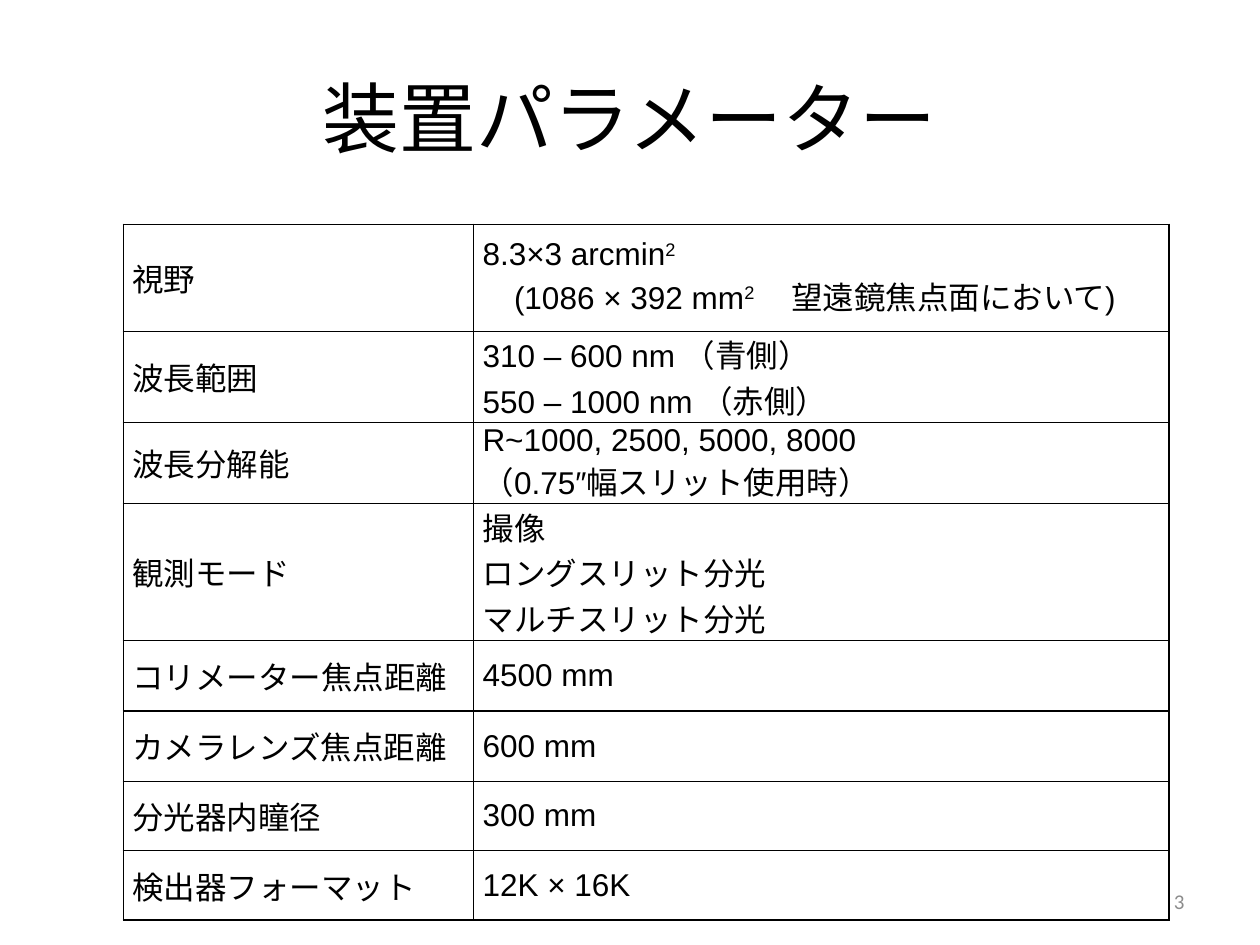
from lxml import etree
from pptx import Presentation
from pptx.dml.color import RGBColor
from pptx.enum import text
from pptx.oxml import ns
from pptx.util import Inches, Pt

COLORS = {"ink": "000000", "number": "8C8C8C"}

# Each parameter: row height, name, lines; a line is a list of (text, is superscript)
PARAMETERS = [
    (0.85, "視野", [[("8.3×3 arcmin", False), ("2\u3000".rstrip(), True)],
                  [("　(1086 × 392 mm", False), ("2 ", True),
                   ("　望遠鏡焦点面において)", False)]]),
    (0.56, "波長範囲", [[("310 – 600 nm （青側）", False)],
                    [("550 – 1000 nm （赤側）", False)]]),
    (0.56, "波長分解能", [[("R~1000, 2500, 5000, 8000", False)],
                     [("（0.75″幅スリット使用時）", False)]]),
    (0.85, "観測モード", [[("撮像", False)], [("ロングスリット分光", False)],
                     [("マルチスリット分光", False)]]),
    (0.56, "コリメーター焦点距離", [[("4500 mm", False)]]),
    (0.56, "カメラレンズ焦点距離", [[("600 mm", False)]]),
    (0.55, "分光器内瞳径", [[("300 mm", False)]]),
    (0.55, "検出器フォーマット", [[("12K × 16K", False)]]),
]


class SlideBuilder:
    heading_font = "Calibri"
    table_font = "Arial"

    def __init__(self, slide):
        self.slide = slide

    def style(self, r, font, size, color):
        r.font.name = font
        r.font.size = Pt(size)
        r.font.color.rgb = RGBColor.from_string(COLORS[color])

    def title(self, words, box):
        sp = self.slide.shapes.title
        sp.left, sp.top, sp.width, sp.height = map(Inches, box)
        tf = sp.text_frame
        tf.text = words
        tf.vertical_anchor = text.MSO_ANCHOR.MIDDLE
        p = tf.paragraphs[0]
        p.alignment = text.PP_ALIGN.CENTER
        self.style(p.runs[0], self.heading_font, 44, "ink")

    def page_number(self, number, box):
        tf = self.slide.shapes.add_textbox(*map(Inches, box)).text_frame
        tf.word_wrap = True
        tf.text = number
        tf.vertical_anchor = text.MSO_ANCHOR.MIDDLE
        p = tf.paragraphs[0]
        p.alignment = text.PP_ALIGN.RIGHT
        self.style(p.runs[0], self.heading_font, 12, "number")

    def borders(self, cell):
        tc_pr = cell._tc.get_or_add_tcPr()
        for side in ("a:lnL", "a:lnR", "a:lnT", "a:lnB"):
            ln = etree.SubElement(tc_pr, ns.qn(side), w=str(Pt(1)))
            fill = etree.SubElement(ln, ns.qn("a:solidFill"))
            etree.SubElement(fill, ns.qn("a:srgbClr"), val=COLORS["ink"])

    def cell(self, cell, lines):
        self.borders(cell)
        cell.fill.background()
        cell.margin_left = cell.margin_right = Inches(0.07)
        cell.margin_top = cell.margin_bottom = 0
        cell.vertical_anchor = text.MSO_ANCHOR.MIDDLE
        tf = cell.text_frame
        for i, line in enumerate(lines):
            p = tf.add_paragraph() if i else tf.paragraphs[0]
            p.alignment = text.PP_ALIGN.JUSTIFY
            for words, superscript in line:
                r = p.add_run()
                r.text = words
                self.style(r, self.table_font, 18, "ink")
                if superscript:
                    r._r.get_or_add_rPr().set("baseline", "30000")

    def table(self, parameters, left, top, widths):
        height = sum(row[0] for row in parameters)
        table = self.slide.shapes.add_table(
            len(parameters), len(widths), Inches(left), Inches(top),
            Inches(sum(widths)), Inches(height)).table
        table.first_row = table.horz_banding = False
        for column, width in zip(table.columns, widths):
            column.width = Inches(width)
        for i, (row_height, name, lines) in enumerate(parameters):
            table.rows[i].height = Inches(row_height)
            self.cell(table.cell(i, 0), [[(name, False)]])
            self.cell(table.cell(i, 1), lines)


def main():
    prs = Presentation()
    prs.slide_width, prs.slide_height = Inches(10), Inches(7.5)
    builder = SlideBuilder(prs.slides.add_slide(prs.slide_layouts[5]))

    # Title
    builder.title("装置パラメーター", (0.5, 0.3, 9, 1.25))
    # Instrument parameters
    builder.table(PARAMETERS, 0.98, 1.78, (2.78, 5.52))
    # Page number
    builder.page_number("3", (7.17, 6.95, 2.33, 0.4))

    prs.save("out.pptx")


if __name__ == "__main__":
    main()
